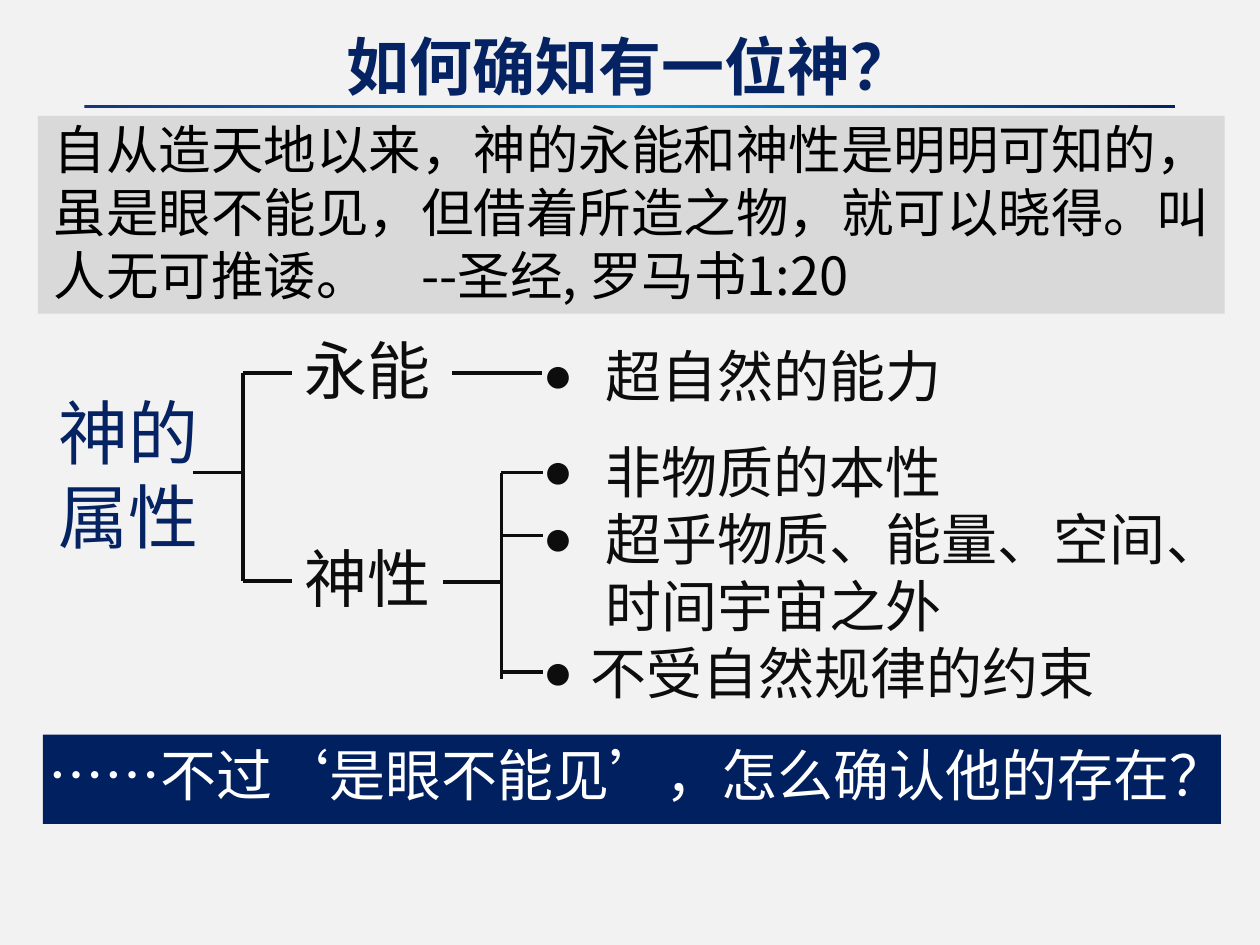
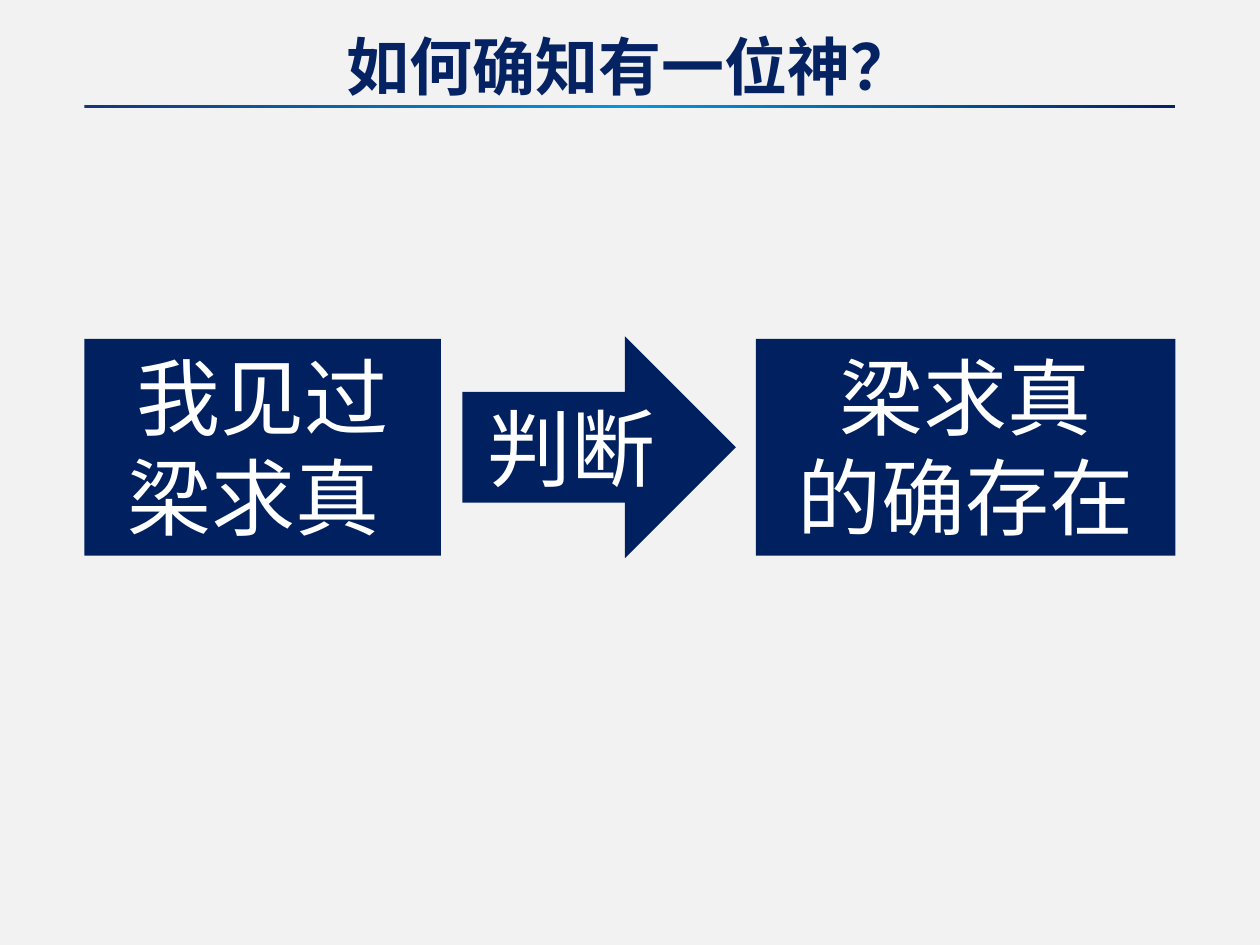
from lxml.etree import SubElement, fromstring
from pptx import Presentation
from pptx.dml.color import RGBColor
from pptx.enum.shapes import MSO_CONNECTOR, MSO_SHAPE
from pptx.enum.text import MSO_ANCHOR, PP_ALIGN
from pptx.oxml.ns import nsdecls, qn
from pptx.util import Inches, Pt

SANS = "Noto Sans CJK SC"
NAVY, BLUE, INK, WHITE = "002060", "052262", "0D0D0D", "FFFFFF"
PAPER, GREY = "F2F2F2", "D9D9D9"
SHINE = [(0, "16357B"), (50, "0097E3"), (100, BLUE)]

TITLE = "如何确知有一位神？"
VERSE = "自从造天地以来，神的永能和神性是明明可知的，虽是眼不能见，但借着所造之物，就可以晓得。叫人无可推诿。　--圣经, 罗马书1:20"
ROOT = ["神的", "属性"]
POWER, NATURE = "永能", "神性"
ABLE = ["超自然的能力"]
TRAITS = ["非物质的本性", "超乎物质、能量、空间、时间宇宙之外", "不受自然规律的约束"]
DOUBT = "……不过‘是眼不能见’，怎么确认他的存在？"
FORKS = [
    dict(stem=1.53, mid=3.75, trunk=1.93, top=2.96, low=4.61, tip=2.32, arms=[2.96, 4.61]),
    dict(stem=3.52, mid=4.62, trunk=3.98, top=3.75, low=5.39, tip=4.31, arms=[3.75, 4.25, 5.33]),
]
STEPS = [
    (MSO_SHAPE.RECTANGLE, (0.67, 2.69, 2.83, 1.72), ["我见过", "梁求真 "], "Arial", MSO_ANCHOR.TOP),
    (MSO_SHAPE.RIGHT_ARROW, (3.67, 2.67, 2.17, 1.76), ["判断"], SANS, MSO_ANCHOR.MIDDLE),
    (MSO_SHAPE.RECTANGLE, (6, 2.69, 3.33, 1.72), ["梁求真", "的确存在"], "Arial", MSO_ANCHOR.TOP),
]


def hue(code):
    return RGBColor.from_string(code)


def write(frame, lines, size=32, color=INK, font=SANS, bold=False,
          align=PP_ALIGN.LEFT, anchor=MSO_ANCHOR.TOP, space=None, dents=()):
    frame.word_wrap = True
    frame.vertical_anchor = anchor
    for i, line in enumerate(lines):
        para = frame.paragraphs[0] if i == 0 else frame.add_paragraph()
        para.alignment = align
        if space:
            para.line_spacing = space
        if dents:
            props = para._p.get_or_add_pPr()
            props.set("marL", str(Inches(dents[i])))
            props.set("indent", str(-Inches(dents[i])))
            SubElement(props, qn("a:buSzPct")).set("val", "90000")
            SubElement(props, qn("a:buFont")).set("typeface", "Arial")
            SubElement(props, qn("a:buChar")).set("char", "●")
        run = para.add_run()
        run.text = line
        run.font.size, run.font.bold, run.font.name = Pt(size), bold, font
        run.font.color.rgb = hue(color)
        SubElement(run._r.get_or_add_rPr(), qn("a:ea")).set("typeface", SANS)


def label(slide, place, lines, **style):
    box = slide.shapes.add_textbox(*map(Inches, place))
    write(box.text_frame, lines, **style)
    return box


def block(slide, place, fill, kind=MSO_SHAPE.RECTANGLE):
    shape = slide.shapes.add_shape(kind, *map(Inches, place))
    shape.shadow.inherit = False
    shape.fill.solid()
    shape.fill.fore_color.rgb = hue(fill)
    shape.line.fill.background()
    return shape


def rule(slide, *ends):
    line = slide.shapes.add_connector(MSO_CONNECTOR.STRAIGHT, *map(Inches, ends))
    line.line.color.rgb = hue(INK)
    line.line.width = Pt(2.25)
    SubElement(line._element.spPr, qn("a:effectLst"))
    return line


def fork(slide, stem, mid, trunk, top, low, tip, arms):
    rule(slide, stem, mid, trunk, mid)
    rule(slide, trunk, top, trunk, low)
    for arm in arms:
        rule(slide, trunk, arm, tip, arm)


def start(deck):
    slide = deck.slides.add_slide(deck.slide_layouts[5])
    bar = block(slide, (0.67, 0.83, 8.66, 0.03), BLUE)
    stops = "".join(f'<a:gs pos="{at * 1000}"><a:srgbClr val="{code}"/></a:gs>' for at, code in SHINE)
    grad = fromstring(f'<a:gradFill {nsdecls("a")}><a:gsLst>{stops}</a:gsLst><a:lin ang="0" scaled="0"/></a:gradFill>')
    props = bar._element.spPr
    props.replace(props.find(qn("a:solidFill")), grad)
    title = slide.shapes.title
    title.left, title.top, title.width, title.height = map(Inches, (0, 0.2, 10, 0.71))
    write(title.text_frame, [TITLE], size=36, color=BLUE, font="Arial", bold=True,
          align=PP_ALIGN.CENTER, anchor=MSO_ANCHOR.MIDDLE, space=0.9)
    return slide


def traits(deck):
    slide = start(deck)
    mid = PP_ALIGN.CENTER
    block(slide, (0.3, 0.92, 9.42, 1.57), GREY)
    label(slide, (0.33, 0.88, 9.5, 1.62), [VERSE], size=30, color="000000")
    label(slide, (-0.2, 3.04, 2.44, 1.45), ROOT, size=40, color=BLUE, align=mid)
    power, _ = [label(slide, (2.25, top, 1.34, 0.76), [word], size=36, align=mid)
                for word, top in [(POWER, 2.58), (NATURE, 4.23)]]
    label(slide, (4.21, 3.42, 5.24, 2.26), TRAITS, dents=(0.5, 0.5, 0.38))
    label(slide, (4.21, 2.66, 5.04, 0.64), ABLE, dents=(0.5,))
    for parts in FORKS:
        fork(slide, **parts)
    rule(slide, 3.59, 2.96, 4.3, 2.96).begin_connect(power, 3)
    block(slide, (0.34, 5.83, 9.35, 0.71), NAVY)
    label(slide, (0.29, 5.83, 9.42, 0.64), [DOUBT], color=WHITE)


def proof(deck):
    slide = start(deck)
    for kind, place, lines, font, anchor in STEPS:
        shape = block(slide, place, NAVY, kind)
        write(shape.text_frame, lines, size=48, color=WHITE, font=font,
              align=PP_ALIGN.CENTER, anchor=anchor)


def main():
    """Build the two slides and save them."""
    deck = Presentation()
    deck.slide_width, deck.slide_height = Inches(10), Inches(7.5)
    back = deck.slide_master.background.fill
    back.solid()
    back.fore_color.rgb = hue(PAPER)
    traits(deck)
    proof(deck)
    deck.save("out.pptx")


if __name__ == "__main__":
    main()
